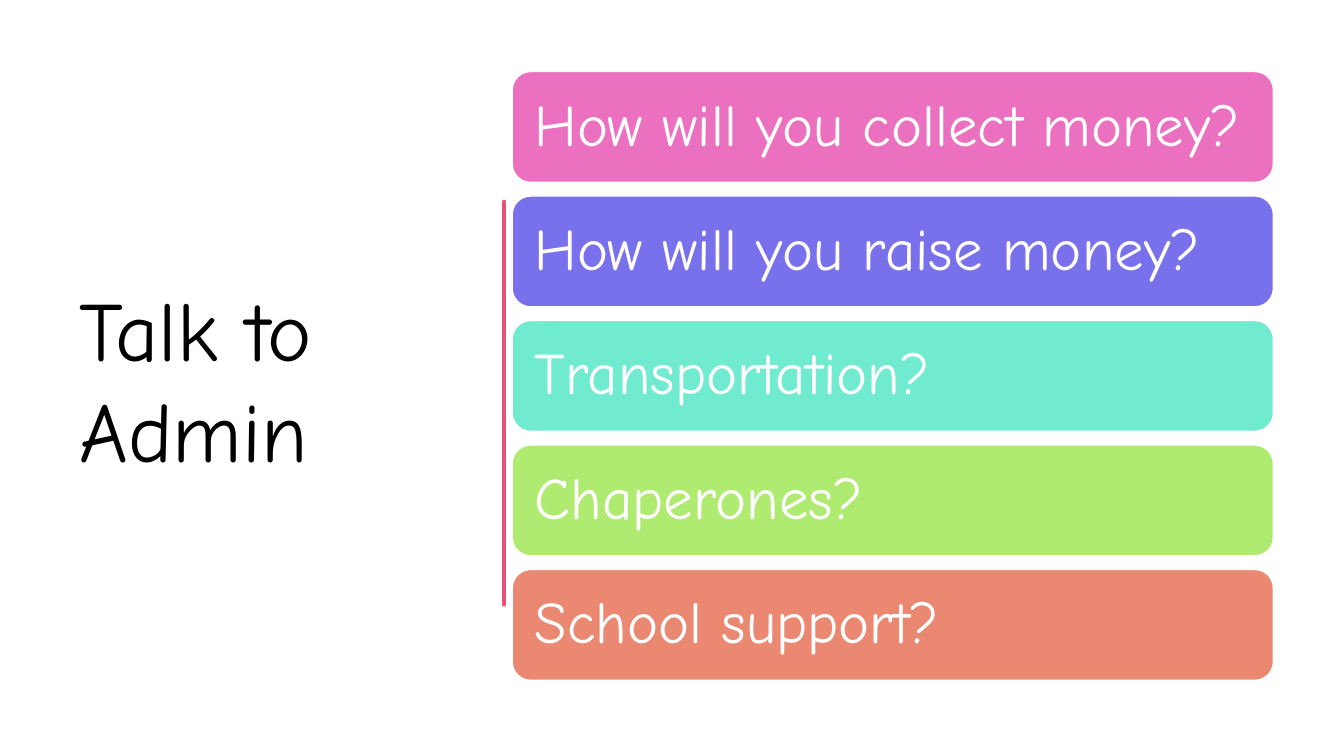
from pptx import Presentation
from pptx.dml.color import RGBColor
from pptx.enum.shapes import MSO_SHAPE
from pptx.enum.text import MSO_ANCHOR, PP_ALIGN
from pptx.util import Inches, Pt

ROUNDED = MSO_SHAPE.ROUNDED_RECTANGLE
MIDDLE = MSO_ANCHOR.MIDDLE
LEFT = PP_ALIGN.LEFT

FONT = "Comic Neue"
COLORS = {
    "white": "FFFFFF",
    "black": "000000",
    "stroke": "E75275",
    "pink": "EB71C0",
    "violet": "7971EB",
    "aqua": "71EBCF",
    "lime": "B0EB71",
    "coral": "EB8871",
}
QUESTIONS = [
    ("How will you collect money?", "pink"),
    ("How will you raise money?", "violet"),
    ("Transportation?", "aqua"),
    ("Chaperones?", "lime"),
    ("School support?", "coral"),
]
CARD_TOP, CARD_STEP = 0.71, 1.235
BRUSH_START = (4.72, 1.7)
BRUSH_CURVES = [
    ((4.73, 1.7), (4.73, 1.7), (4.74, 1.7)),
    ((4.76, 1.86), (4.71, 2.07), (4.74, 2.43)),
    ((4.77, 2.79), (4.75, 2.85), (4.74, 2.99)),
    ((4.72, 3.13), (4.76, 3.31), (4.74, 3.59)),
    ((4.71, 3.87), (4.76, 4.13), (4.74, 4.36)),
    ((4.72, 4.58), (4.71, 4.85), (4.74, 5.04)),
    ((4.77, 5.23), (4.72, 5.48), (4.74, 5.8)),
    ((4.73, 5.8), (4.73, 5.8), (4.72, 5.8)),
    ((4.74, 5.54), (4.71, 5.36), (4.72, 5.24)),
    ((4.73, 5.13), (4.75, 4.83), (4.72, 4.48)),
    ((4.69, 4.13), (4.72, 4.06), (4.72, 3.75)),
    ((4.71, 3.45), (4.72, 3.41), (4.72, 3.19)),
    ((4.72, 2.98), (4.74, 2.85), (4.72, 2.55)),
    ((4.7, 2.26), (4.69, 2.12), (4.72, 1.7)),
]


def color(name):
    """Return the named palette colour."""
    return RGBColor.from_string(COLORS[name])


def paint(shape, fill, line, width):
    """Give a shape a flat fill and outline without a shadow."""
    shape.shadow.inherit = False
    shape.fill.solid()
    shape.fill.fore_color.rgb = color(fill)
    shape.line.color.rgb = color(line)
    shape.line.width = Pt(width)


def write(frame, text, size, text_color):
    """Write one left-aligned, vertically centred paragraph."""
    frame.word_wrap = True
    frame.vertical_anchor = MIDDLE
    paragraph = frame.paragraphs[0]
    paragraph.text = text
    paragraph.alignment = LEFT
    paragraph.font.name = FONT
    paragraph.font.size = Pt(size)
    paragraph.font.color.rgb = color(text_color)
    return paragraph


def add_title(slide, text):
    """Add the large heading on the left."""
    title = slide.shapes.add_textbox(Inches(0.69), Inches(0.7), Inches(3.74), Inches(6.11))
    write(title.text_frame, text, 60, "black")


def curve_points(start, curves, steps=8):
    """Yield points along a chain of cubic curves."""
    for first, second, end in curves:
        for step in range(1, steps + 1):
            t = step / steps
            yield tuple(
                (1 - t) ** 3 * a + 3 * (1 - t) ** 2 * t * b + 3 * (1 - t) * t**2 * c + t**3 * d
                for a, b, c, d in zip(start, first, second, end)
            )
        start = end


def add_brush_line(slide):
    """Add the hand-drawn vertical divider."""
    builder = slide.shapes.build_freeform(*BRUSH_START, scale=Inches(1))
    builder.add_line_segments(list(curve_points(BRUSH_START, BRUSH_CURVES)), close=True)
    paint(builder.convert_to_shape(), "stroke", "stroke", 2.75)


def add_question(slide, top, text, fill):
    """Add one rounded question card."""
    card = slide.shapes.add_shape(ROUNDED, Inches(5.08), Inches(top), Inches(7.55), Inches(1.1))
    paint(card, fill, "white", 1)
    frame = card.text_frame
    frame.margin_left = frame.margin_right = Inches(0.17)
    frame.margin_top = frame.margin_bottom = Inches(0.17)
    write(frame, text, 42, "white").line_spacing = 0.9


def main():
    """Build and save the slide."""
    deck = Presentation()
    deck.slide_width, deck.slide_height = Inches(13.33), Inches(7.5)
    slide = deck.slides.add_slide(deck.slide_layouts[6])
    slide.background.fill.solid()
    slide.background.fill.fore_color.rgb = color("white")
    add_title(slide, "Talk to Admin")
    add_brush_line(slide)
    for row, (question, fill) in enumerate(QUESTIONS):
        add_question(slide, CARD_TOP + row * CARD_STEP, question, fill)
    deck.save("out.pptx")


if __name__ == "__main__":
    main()
